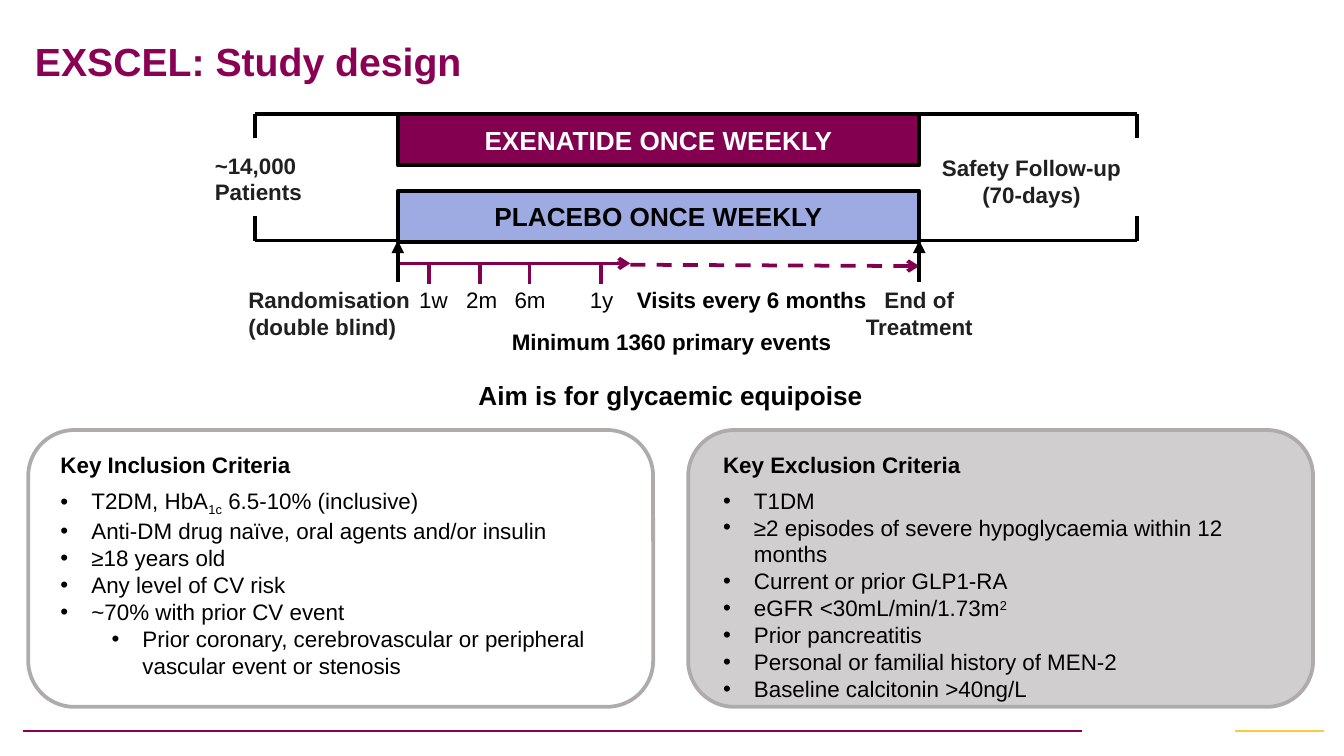
from typing import NamedTuple

from lxml import etree
from pptx import Presentation
from pptx.dml.color import RGBColor
from pptx.enum.dml import MSO_LINE
from pptx.enum.shapes import MSO_CONNECTOR, MSO_SHAPE
from pptx.enum.text import MSO_ANCHOR, MSO_AUTO_SIZE, PP_ALIGN
from pptx.oxml.ns import qn
from pptx.util import Inches, Pt

STRAIGHT = MSO_CONNECTOR.STRAIGHT
RECT, ROUNDED = MSO_SHAPE.RECTANGLE, MSO_SHAPE.ROUNDED_RECTANGLE
LEFT, CENTER = PP_ALIGN.LEFT, PP_ALIGN.CENTER
TOP, MIDDLE = MSO_ANCHOR.TOP, MSO_ANCHOR.MIDDLE
NO_FIT = MSO_AUTO_SIZE.NONE
DASH = MSO_LINE.DASH

FONT = "Arial"
COLORS = {
    "title": "8A0054", "plum": "830051", "gold": "FFCA38", "periwinkle": "9DABE2",
    "black": "000000", "ink": "212021", "white": "FFFFFF",
    "border": "AFABAB", "panel": "D0CECE",
}
SUBSCRIPT, SUPERSCRIPT = -25, 30
BULLET_INDENT, SUB_BULLET_INDENT, HANGING = 0.23, 0.61, 0.23


class Box(NamedTuple):
    left: float
    top: float
    width: float
    height: float


class Piece(NamedTuple):
    text: str
    baseline: int = 0


class Criterion(NamedTuple):
    pieces: list[Piece]
    level: int = 0


class Arm(NamedTuple):
    name: str
    top: float
    fill: str
    ink: str


class Label(NamedTuple):
    text: str
    box: Box
    color: str = "black"
    align: int = LEFT
    size: float = 12
    bold: bool = True
    tabs: tuple[float, ...] = ()


class Panel(NamedTuple):
    heading: str
    criteria: list[Criterion]
    outline: Box
    body: Box
    fill: str | None


def rgb(name: str) -> RGBColor:
    return RGBColor.from_string(COLORS[name])


def inches(box: Box) -> list[int]:
    return [Inches(value) for value in box]


def place(shape, box: Box) -> None:
    shape.left, shape.top, shape.width, shape.height = inches(box)


def write(paragraph, text, *, size=12, color="black", bold=False, align=LEFT,
          baseline=0, before=0, spacing=1.0) -> None:
    paragraph.alignment = align
    paragraph.space_before = Pt(before)
    paragraph.space_after = Pt(0)
    paragraph.line_spacing = spacing
    run = paragraph.add_run()
    run.text = text
    run.font.name, run.font.size, run.font.bold = FONT, Pt(size), bold
    run.font.color.rgb = rgb(color)
    if baseline:
        run._r.get_or_add_rPr().set("baseline", str(baseline * 1000))


def prepare_frame(frame, anchor, side: float = 0.1, edge: float = 0.05) -> None:
    frame.word_wrap = True
    frame.auto_size = NO_FIT
    frame.vertical_anchor = anchor
    frame.margin_left = frame.margin_right = Inches(side)
    frame.margin_top = frame.margin_bottom = Inches(edge)


def set_bullet(paragraph, margin: float, character: str | None) -> None:
    properties = paragraph._p.get_or_add_pPr()
    properties.set("marL", str(Inches(margin)))
    properties.set("indent", str(Inches(-HANGING) if character else 0))
    if character:
        etree.SubElement(properties, qn("a:buFont")).set("typeface", FONT)
        etree.SubElement(properties, qn("a:buChar")).set("char", character)
    else:
        etree.SubElement(properties, qn("a:buNone"))


def set_tabs(paragraph, stops: tuple[float, ...]) -> None:
    tab_list = etree.SubElement(paragraph._p.get_or_add_pPr(), qn("a:tabLst"))
    for stop in stops:
        etree.SubElement(tab_list, qn("a:tab"), pos=str(Inches(stop)), algn="l")


def draw_line(slide, x1: float, y1: float, x2: float, y2: float, color: str = "black",
              width: float = 2, head: str | None = None, dash=None) -> None:
    line = slide.shapes.add_connector(STRAIGHT, *inches((x1, y1, x2, y2)))
    line.line.color.rgb = rgb(color)
    line.line.width = Pt(width)
    if dash:
        line.line.dash_style = dash
    if head:
        etree.SubElement(line.line._get_or_add_ln(), qn("a:tailEnd")).set("type", head)
    etree.SubElement(line._element.spPr, qn("a:effectLst"))


def draw_shape(slide, kind, box: Box, fill: str | None, border: str):
    shape = slide.shapes.add_shape(kind, *inches(box))
    shape.shadow.inherit = False
    if fill:
        shape.fill.solid()
        shape.fill.fore_color.rgb = rgb(fill)
    else:
        shape.fill.background()
    shape.line.color.rgb = rgb(border)
    shape.line.width = Pt(2)
    return shape


def draw_label(slide, label: Label) -> None:
    frame = slide.shapes.add_textbox(*inches(label.box)).text_frame
    prepare_frame(frame, TOP, *((0.07, 0.04) if label.size > 12 else (0.1, 0.05)))
    for index, text in enumerate(label.text.split("\n")):
        paragraph = frame.add_paragraph() if index else frame.paragraphs[0]
        if label.tabs:
            set_tabs(paragraph, label.tabs)
        write(paragraph, text, size=label.size, color=label.color,
              bold=label.bold, align=label.align)


def draw_panel(slide, panel: Panel, body) -> None:
    outline = draw_shape(slide, ROUNDED, panel.outline, panel.fill, "border")
    outline._element.addnext(body._element)
    place(body, panel.body)
    frame = body.text_frame
    prepare_frame(frame, TOP)
    heading = frame.paragraphs[0]
    set_bullet(heading, 0, None)
    write(heading, panel.heading, bold=True)
    for index, criterion in enumerate(panel.criteria):
        paragraph = frame.add_paragraph()
        paragraph.level = criterion.level
        set_bullet(paragraph, SUB_BULLET_INDENT if criterion.level else BULLET_INDENT, "•")
        for piece in criterion.pieces:
            write(paragraph, piece.text, baseline=piece.baseline,
                  before=0 if index else 4.5)


BAR_LEFT, BAR_RIGHT, BAR_HEIGHT = 2.96, 6.84, 0.38
FRAME_TOP, FRAME_BOTTOM, STUB = 0.85, 1.79, 0.18
ARMS = [Arm("PLACEBO ONCE WEEKLY", 1.42, "periwinkle", "black"),
        Arm("EXENATIDE ONCE WEEKLY", 0.85, "plum", "white")]
BRACKETS = [(1.9, 3.55), (8.46, 6.81)]
VISIT_TICKS = (3.19, 3.57, 3.94, 4.47)
AXIS, FIRST_YEAR_END = 1.96, 4.69

LABELS = [
    Label("~14,000 Patients", Box(1.5, 1.08, 1.33, 0.5), "ink"),
    Label("Safety Follow-up\n(70-days)", Box(6.9, 1.1, 1.55, 0.5), "ink", CENTER),
    Label("Visits every 6 months", Box(4.64, 2.08, 1.94, 0.3)),
    Label("Randomisation\n(double blind)", Box(1.75, 2.08, 1.64, 0.5), "ink"),
    Label("1w\t2m\t6m\t1y", Box(3.02, 2.08, 2.51, 0.3), bold=False,
          tabs=(0.35, 0.71, 1.27)),
    Label("Minimum 1360 primary events", Box(3.71, 2.39, 3.33, 0.3)),
    Label("End of Treatment", Box(6.24, 2.08, 1.2, 0.5), "ink", CENTER),
    Label("Aim is for glycaemic equipoise", Box(3.49, 2.78, 3.13, 0.31), size=14),
]

INCLUSION = [
    Criterion([Piece("T2DM, HbA"), Piece("1c", SUBSCRIPT), Piece(" 6.5-10% (inclusive)")]),
    Criterion([Piece("Anti-DM drug naïve, oral agents and/or insulin")]),
    Criterion([Piece("≥18 years old")]),
    Criterion([Piece("Any level of CV risk")]),
    Criterion([Piece("~70% with prior CV event")]),
    Criterion([Piece("Prior coronary, cerebrovascular or peripheral vascular event or stenosis")], 1),
]
EXCLUSION = [
    Criterion([Piece("T1DM")]),
    Criterion([Piece("≥2 episodes of severe hypoglycaemia within 12 months")]),
    Criterion([Piece("Current or prior GLP1-RA")]),
    Criterion([Piece("eGFR <30mL/min/1.73m"), Piece("2", SUPERSCRIPT)]),
    Criterion([Piece("Prior pancreatitis")]),
    Criterion([Piece("Personal or familial history of MEN-2")]),
    Criterion([Piece("Baseline calcitonin >40ng/L")]),
]
PANELS = [
    Panel("Key Inclusion Criteria", INCLUSION, Box(0.21, 3.2, 4.65, 2.06),
          Box(0.35, 3.31, 4.5, 1.79), None),
    Panel("Key Exclusion Criteria", EXCLUSION, Box(5.12, 3.2, 4.65, 2.06),
          Box(5.28, 3.31, 4.47, 1.99), "panel"),
]


def main() -> None:
    deck = Presentation()
    deck.slide_width, deck.slide_height = Inches(10), Inches(10 * 9 / 16)
    slide = deck.slides.add_slide(deck.slide_layouts[3])
    title, *bodies = slide.placeholders

    draw_line(slide, 0.17, 5.44, 8.05, 5.44, "title", 1)
    draw_line(slide, 9.19, 5.44, 9.85, 5.44, "gold", 1)
    place(title, Box(0.19, 0.18, 8.62, 0.59))
    prepare_frame(title.text_frame, MIDDLE, 0.07, 0.04)
    write(title.text_frame.paragraphs[0], "EXSCEL: Study design", size=21,
          color="title", bold=True, spacing=0.9)

    for outer, inner in BRACKETS:
        for y, stub in ((FRAME_TOP, STUB), (FRAME_BOTTOM, -STUB)):
            draw_line(slide, outer, y + stub, outer, y)
            draw_line(slide, outer, y, inner, y)
    for arm in ARMS:
        box = Box(BAR_LEFT, arm.top, BAR_RIGHT - BAR_LEFT, BAR_HEIGHT)
        bar = draw_shape(slide, RECT, box, arm.fill, "black")
        prepare_frame(bar.text_frame, MIDDLE)
        write(bar.text_frame.paragraphs[0], arm.name, size=14, color=arm.ink,
              bold=True, align=CENTER)

    draw_line(slide, FIRST_YEAR_END, 1.97, BAR_RIGHT, 1.98, "plum", head="arrow", dash=DASH)
    draw_line(slide, BAR_LEFT, AXIS, FIRST_YEAR_END, AXIS, "plum", head="arrow")
    for x in VISIT_TICKS:
        draw_line(slide, x, AXIS, x, AXIS + 0.15, "plum")
    for x in (BAR_LEFT, BAR_RIGHT):
        draw_line(slide, x, 2.1, x, FRAME_BOTTOM, width=2.25, head="triangle")
    for label in LABELS:
        draw_label(slide, label)
    for panel, body in zip(PANELS, bodies):
        draw_panel(slide, panel, body)
    deck.save("out.pptx")


if __name__ == "__main__":
    main()
